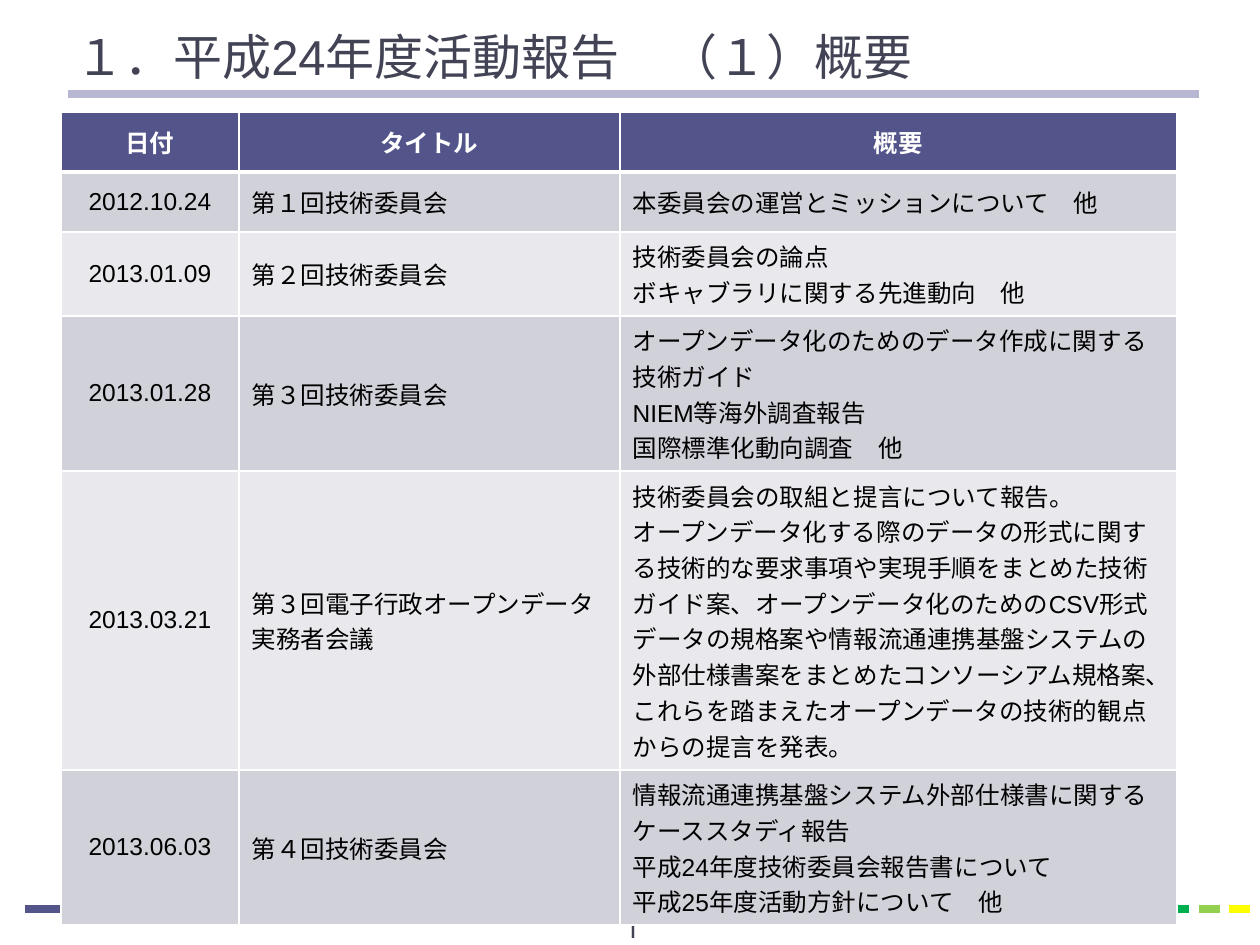
"""Build the activity report overview slide with its committee meeting table."""
from typing import NamedTuple

from lxml import etree
from pptx import Presentation
from pptx.dml.color import RGBColor
from pptx.enum.shapes import MSO_CONNECTOR
from pptx.enum.text import MSO_ANCHOR, MSO_AUTO_SIZE, PP_ALIGN
from pptx.oxml.ns import qn
from pptx.util import Emu, Pt

STRAIGHT = MSO_CONNECTOR.STRAIGHT
MIDDLE, BOTTOM = MSO_ANCHOR.MIDDLE, MSO_ANCHOR.BOTTOM
LEFT, CENTER = PP_ALIGN.LEFT, PP_ALIGN.CENTER
NO_AUTOFIT = MSO_AUTO_SIZE.NONE

INDIGO = RGBColor(0x53, 0x54, 0x8A)
LAVENDER = RGBColor(0xB7, 0xB7, 0xD4)
SLATE = RGBColor(0x42, 0x44, 0x56)
GREEN = RGBColor(0x00, 0xB0, 0x50)
LIME = RGBColor(0x92, 0xD0, 0x50)
YELLOW = RGBColor(0xFF, 0xFF, 0x00)
BAND_DARK = RGBColor(0xD1, 0xD1, 0xDA)
BAND_LIGHT = RGBColor(0xE9, 0xE9, 0xED)
WHITE = RGBColor(0xFF, 0xFF, 0xFF)
BLACK = RGBColor(0x00, 0x00, 0x00)

EMU_PER_PX = 914400 / 126
FOOTER_Y = 909
HEADER_HEIGHT = 60
COLUMN_WIDTHS = (178, 381, 557)
HEADINGS = ("日付", "タイトル", "概要")


class Rule(NamedTuple):
    x1: int
    x2: int
    y: int
    color: RGBColor
    weight: float


class Meeting(NamedTuple):
    date: str
    title: str
    summary: tuple[str, ...]
    height: int


RULES = (
    Rule(25, 1155, FOOTER_Y, INDIGO, 4.5),
    Rule(1168, 1189, FOOTER_Y, GREEN, 4.5),
    Rule(1199, 1220, FOOTER_Y, LIME, 4.5),
    Rule(1229, 1250, FOOTER_Y, YELLOW, 4.5),
    Rule(68, 1199, 94, LAVENDER, 4.25),
)

MEETINGS = (
    Meeting("2012.10.24", "第１回技術委員会",
            ("本委員会の運営とミッションについて　他",), 60),
    Meeting("2013.01.09", "第２回技術委員会",
            ("技術委員会の論点", "ボキャブラリに関する先進動向　他"), 84),
    Meeting("2013.01.28", "第３回技術委員会",
            ("オープンデータ化のためのデータ作成に関する技術ガイド",
             "NIEM等海外調査報告",
             "国際標準化動向調査　他"), 155),
    Meeting("2013.03.21", "第３回電子行政オープンデータ実務者会議",
            ("技術委員会の取組と提言について報告。",
             "オープンデータ化する際のデータの形式に関する技術的な要求事項や"
             "実現手順をまとめた技術ガイド案、オープンデータ化のためのCSV形式"
             "データの規格案や情報流通連携基盤システムの外部仕様書案をまとめた"
             "コンソーシアム規格案、これらを踏まえたオープンデータの技術的観点"
             "からの提言を発表。"), 299),
    Meeting("2013.06.03", "第４回技術委員会",
            ("情報流通連携基盤システム外部仕様書に関するケーススタディ報告",
             "平成24年度技術委員会報告書について",
             "平成25年度活動方針について　他"), 155),
)


def px(value: int) -> Emu:
    """Convert pixels to EMU."""
    return Emu(round(value * EMU_PER_PX))


def write(tf, lines: tuple[str, ...], size: int, color: RGBColor,
          align=LEFT, font: str = "Arial", bold: bool = False) -> None:
    """Write each line as one formatted paragraph."""
    for i, line in enumerate(lines):
        p = tf.paragraphs[0] if i == 0 else tf.add_paragraph()
        p.alignment = align
        r = p.add_run()
        r.text = line
        r.font.name = font
        r.font.size = Pt(size)
        r.font.bold = bold
        r.font.color.rgb = color


def draw_rule(slide, rule: Rule) -> None:
    """Draw a horizontal rule without a shadow."""
    line = slide.shapes.add_connector(
        STRAIGHT, px(rule.x1), px(rule.y), px(rule.x2), px(rule.y))
    line.line.color.rgb = rule.color
    line.line.width = Pt(rule.weight)
    etree.SubElement(line._element.spPr, qn("a:effectLst"))


def set_borders(cell, bottom: int, top: int) -> None:
    """Give a cell white borders."""
    tcPr = cell._tc.get_or_add_tcPr()
    for side, weight in (("L", 1), ("R", 1), ("T", top), ("B", bottom)):
        ln = etree.SubElement(tcPr, qn(f"a:ln{side}"), w=str(Pt(weight)))
        fill = etree.SubElement(ln, qn("a:solidFill"))
        etree.SubElement(fill, qn("a:srgbClr"), val=str(WHITE))


def fill_cell(cell, lines: tuple[str, ...], row: int, align) -> None:
    """Format and fill one table cell according to its row."""
    header = row == 0
    set_borders(cell, bottom=3 if header else 1, top=3 if row == 1 else 1)
    cell.fill.solid()
    band = BAND_DARK if row % 2 else BAND_LIGHT
    cell.fill.fore_color.rgb = INDIGO if header else band
    cell.vertical_anchor = MIDDLE
    write(cell.text_frame, lines, 14, WHITE if header else BLACK,
          align, bold=header)


def draw_table(slide) -> None:
    """Draw the meeting table."""
    heights = (HEADER_HEIGHT, *(m.height for m in MEETINGS))
    table = slide.shapes.add_table(
        len(heights), len(COLUMN_WIDTHS), px(61), px(112),
        px(sum(COLUMN_WIDTHS)), px(sum(heights))).table
    for column, width in zip(table.columns, COLUMN_WIDTHS):
        column.width = px(width)
    for row, height in zip(table.rows, heights):
        row.height = px(height)
    for col, heading in enumerate(HEADINGS):
        fill_cell(table.cell(0, col), (heading,), 0, CENTER)
    for row, m in enumerate(MEETINGS, start=1):
        for col, lines in enumerate(((m.date,), (m.title,), m.summary)):
            fill_cell(table.cell(row, col), lines, row,
                      CENTER if col == 0 else LEFT)


def draw_title(slide) -> None:
    """Place and format the title."""
    sp = slide.shapes.title
    sp.left, sp.top, sp.width, sp.height = px(63), px(1), px(1134), px(91)
    tf = sp.text_frame
    tf.auto_size = NO_AUTOFIT
    tf.vertical_anchor = BOTTOM
    write(tf, ("１．平成24年度活動報告　（１）概要",), 28, SLATE)


def draw_page_number(slide) -> None:
    """Draw the page number at the foot of the slide."""
    sp = slide.shapes.add_textbox(px(496), px(908), px(273), px(50))
    tf = sp.text_frame
    tf.word_wrap = True
    write(tf, ("1",), 14, SLATE, CENTER, "Cabin")


def main() -> None:
    """Build and save the presentation."""
    prs = Presentation()
    prs.slide_width, prs.slide_height = px(1260), px(945)
    slide = prs.slides.add_slide(prs.slide_layouts[5])
    for rule in RULES:
        draw_rule(slide, rule)
    draw_title(slide)
    draw_page_number(slide)
    draw_table(slide)
    prs.save("out.pptx")


if __name__ == "__main__":
    main()
